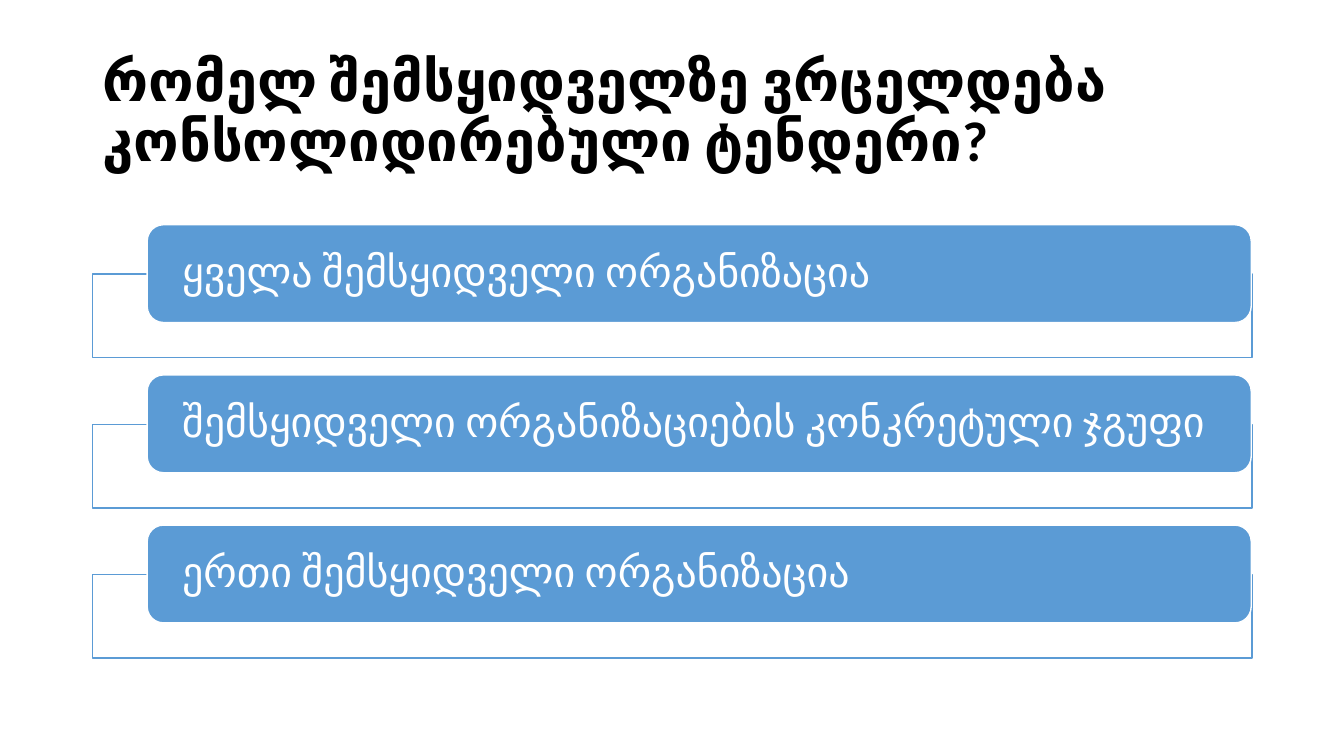
from dataclasses import dataclass

from lxml import etree
from pptx import Presentation
from pptx import util as u
from pptx.dml.color import RGBColor
from pptx.enum import shapes, text
from pptx.oxml.ns import qn

BLUE, WHITE, BLACK = "5B9BD5", "FFFFFF", "000000"
FONT = "Calibri"
FIRST_TOP, ROW_PITCH, FRAME_DROP = 2.23, 1.49, 0.49


@dataclass
class Box:
    left: float
    top: float
    width: float
    height: float

    def lengths(self) -> list:
        return [u.Inches(n) for n in (self.left, self.top, self.width, self.height)]


def color(hex_code: str) -> RGBColor:
    return RGBColor.from_string(hex_code)


def add_box(slide, kind, box: Box, fill: str, line: str):
    shape = slide.shapes.add_shape(kind, *box.lengths())
    shape.shadow.inherit = False
    shape.fill.solid()
    shape.fill.fore_color.rgb = color(fill)
    shape.line.color.rgb = color(line)
    shape.line.width = u.Pt(1)
    return shape


def set_opacity(shape, percent: int) -> None:
    fill = shape.fill._xPr.find(qn("a:solidFill"))
    etree.SubElement(fill[0], qn("a:alpha"), val=str(percent * 1000))


def write(shape, words: str, *, size: float, ink: str, bold: bool = False,
          side: float = 0.1, edge: float = 0.05) -> None:
    frame = shape.text_frame
    frame.word_wrap = True
    frame.auto_size = text.MSO_AUTO_SIZE.NONE
    frame.vertical_anchor = text.MSO_ANCHOR.MIDDLE
    frame.margin_left = frame.margin_right = u.Inches(side)
    frame.margin_top = frame.margin_bottom = u.Inches(edge)
    paragraph = frame.paragraphs[0]
    paragraph.alignment = text.PP_ALIGN.LEFT
    paragraph.line_spacing = 0.9
    paragraph.space_before = u.Pt(0)
    run = paragraph.add_run()
    run.text = words
    run.font.name = FONT
    run.font.size = u.Pt(size)
    run.font.bold = bold
    run.font.color.rgb = color(ink)


def add_answer(slide, words: str, top: float) -> None:
    frame = add_box(slide, shapes.MSO_SHAPE.RECTANGLE,
                    Box(0.92, top + FRAME_DROP, 11.5, 0.83), WHITE, BLUE)
    set_opacity(frame, 90)
    label = add_box(slide, shapes.MSO_SHAPE.ROUNDED_RECTANGLE,
                    Box(1.46, top, 10.95, 0.97), BLUE, WHITE)
    write(label, words, size=30, ink=WHITE, side=0.3, edge=0)


def main() -> None:
    presentation = Presentation()
    presentation.slide_width = u.Inches(13.33)
    presentation.slide_height = u.Inches(7.5)
    slide = presentation.slides.add_slide(presentation.slide_layouts[5])

    # Title
    title = slide.shapes.title
    title.left, title.top, title.width, title.height = Box(0.92, 0.4, 11.5, 1.45).lengths()
    write(title, "რომელ შემსყიდველზე ვრცელდება კონსოლიდირებული ტენდერი?",
          size=40, ink=BLACK, bold=True)

    # Answers
    answers = (
        "ყველა შემსყიდველი ორგანიზაცია",
        "შემსყიდველი ორგანიზაციების კონკრეტული ჯგუფი",
        "ერთი შემსყიდველი ორგანიზაცია",
    )
    for row, words in enumerate(answers):
        add_answer(slide, words, FIRST_TOP + row * ROW_PITCH)

    presentation.save("out.pptx")


if __name__ == "__main__":
    main()
